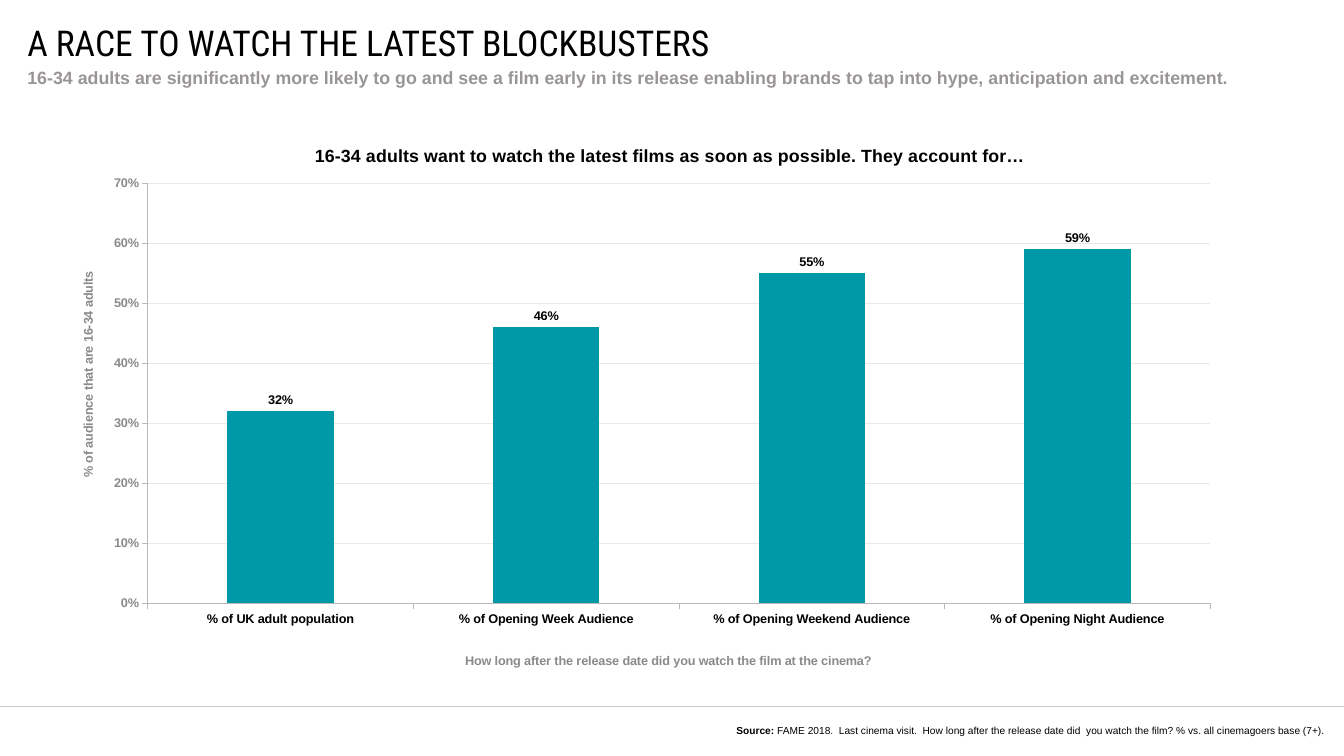
from lxml import etree
from pptx import Presentation
from pptx.chart.data import CategoryChartData
from pptx.dml.color import RGBColor
from pptx.enum import chart as ch, shapes, text
from pptx.oxml import parse_xml
from pptx.oxml.ns import nsdecls, qn
from pptx.util import Cm, Pt

BLACK = RGBColor(0x00, 0x00, 0x00)
SUBTITLE_GREY = RGBColor(0x99, 0x95, 0x95)
AXIS_TEXT = RGBColor(0x8A, 0x8A, 0x8D)
AXIS_LINE = RGBColor(0xB9, 0xB9, 0xBB)
GRID = RGBColor(0xEA, 0xE9, 0xE9)
RULE = RGBColor(0xCA, 0xC8, 0xC8)
TEAL = RGBColor(0x00, 0x99, 0xA8)


def style(font, size, color, bold=True, name="Arial"):
    font.name = name
    font.size = Pt(size)
    font.bold = bold
    font.color.rgb = color


def place(parent, index, **fractions):
    for old in parent.findall(qn("c:layout")):
        parent.remove(old)
    layout = parse_xml(f"<c:layout {nsdecls('c')}><c:manualLayout/></c:layout>")
    settings = {"xMode": "edge", "yMode": "edge", **fractions}
    if "w" in fractions:
        settings = {"layoutTarget": "inner", **settings}
    for tag, val in settings.items():
        etree.SubElement(layout[0], qn(f"c:{tag}")).set("val", str(val))
    parent.insert(index, layout)


prs = Presentation()
prs.slide_width, prs.slide_height = Cm(37.34), Cm(21.01)
s = prs.slides.add_slide(prs.slide_layouts[6])

rule = s.shapes.add_connector(
    shapes.MSO_CONNECTOR.STRAIGHT, 0, Cm(19.63), prs.slide_width, Cm(19.63))
rule.line.color.rgb = RULE
rule.line.width = Pt(0.5)
etree.SubElement(rule._element.spPr, qn("a:effectLst"))

title = [("A RACE TO WATCH THE LATEST BLOCKBUSTERS", False)]
subtitle = [("16-34 adults are significantly more likely to go and see a film early in its release "
             "enabling brands to tap into hype, anticipation and excitement.", True)]
source = [("Source: ", True),
          ("FAME 2018.  Last cinema visit.  How long after the release date did  you watch "
           "the film? % vs. all cinemagoers base (7+).", False)]
LEFT, RIGHT = text.PP_ALIGN.LEFT, text.PP_ALIGN.RIGHT
TOP, MIDDLE = text.MSO_ANCHOR.TOP, text.MSO_ANCHOR.MIDDLE

for runs, box, size, color, font_name, align, anchor, wrap in (
    (title, (0.76, 0.76, 34.5, 0.81), 28, BLACK, "Roboto Condensed", LEFT, MIDDLE, False),
    (subtitle, (0.76, 1.85, 34.5, 1.22), 14, SUBTITLE_GREY, "Arial", LEFT, TOP, True),
    (source, (19.43, 20.14, 17.4, 0.33), 8, BLACK, "Arial", RIGHT, MIDDLE, True),
):
    tf = s.shapes.add_textbox(*map(Cm, box)).text_frame
    tf.margin_left = tf.margin_right = tf.margin_top = tf.margin_bottom = 0
    tf.word_wrap = wrap
    tf.vertical_anchor = anchor
    p = tf.paragraphs[0]
    p.alignment = align
    style(p.font, size, color, runs[0][1], font_name)
    for words, bold in runs:
        r = p.add_run()
        r.text = words
        if len(runs) > 1:
            r.font.bold = bold

data = CategoryChartData(number_format="0%")
data.categories = ["% of UK adult population", "% of Opening Week Audience",
                   "% of Opening Weekend Audience", "% of Opening Night Audience"]
data.add_series("Series 1", (0.32, 0.46, 0.55, 0.59))
chart = s.shapes.add_chart(ch.XL_CHART_TYPE.COLUMN_CLUSTERED,
                           Cm(1.96), Cm(3.76), Cm(32.05), Cm(14.91), data).chart
style(chart.font, 12, BLACK, False)
chart.has_legend = False
place(chart._chartSpace.chart.plotArea, 0, x=0.067, y=0.09, w=0.921, h=0.788)

cat, val = chart.category_axis, chart.value_axis
for owner, words, size, color, x, y in (
    (chart, "16-34 adults want to watch the latest films as soon as possible. "
            "They account for…", 14, BLACK, 0.209, 0.01),
    (cat, "How long after the release date did you watch the film at the cinema?",
     10, AXIS_TEXT, 0.34, 0.965),
    (val, "% of audience that are 16-34 adults", 10, AXIS_TEXT, 0.006, 0.253),
):
    heading = owner.chart_title if owner is chart else owner.axis_title
    tf = heading.text_frame
    tf.text = words
    style(tf.paragraphs[0].font, size, color)
    place(heading._element, 1, x=x, y=y)

for axis, color in ((cat, BLACK), (val, AXIS_TEXT)):
    style(axis.tick_labels.font, 10, color)
    axis.major_tick_mark = ch.XL_TICK_MARK.OUTSIDE
    axis.minor_tick_mark = ch.XL_TICK_MARK.NONE
    axis.format.line.color.rgb = AXIS_LINE
    axis.format.line.width = Pt(0.75)
val.minimum_scale, val.maximum_scale, val.major_unit = 0, 0.7, 0.1
val.tick_labels.number_format = "0%"
val.tick_labels.number_format_is_linked = False
val.major_gridlines.format.line.color.rgb = GRID
val.major_gridlines.format.line.width = Pt(0.75)

plot = chart.plots[0]
plot.gap_width = 150
plot.vary_by_categories = False
fill = plot.series[0].format.fill
fill.solid()
fill.fore_color.rgb = TEAL
plot.has_data_labels = True
labels = plot.data_labels
labels.show_value = True
labels.position = ch.XL_LABEL_POSITION.OUTSIDE_END
labels.number_format = "0%"
labels.number_format_is_linked = False
style(labels.font, 10, BLACK)

prs.save("out.pptx")
